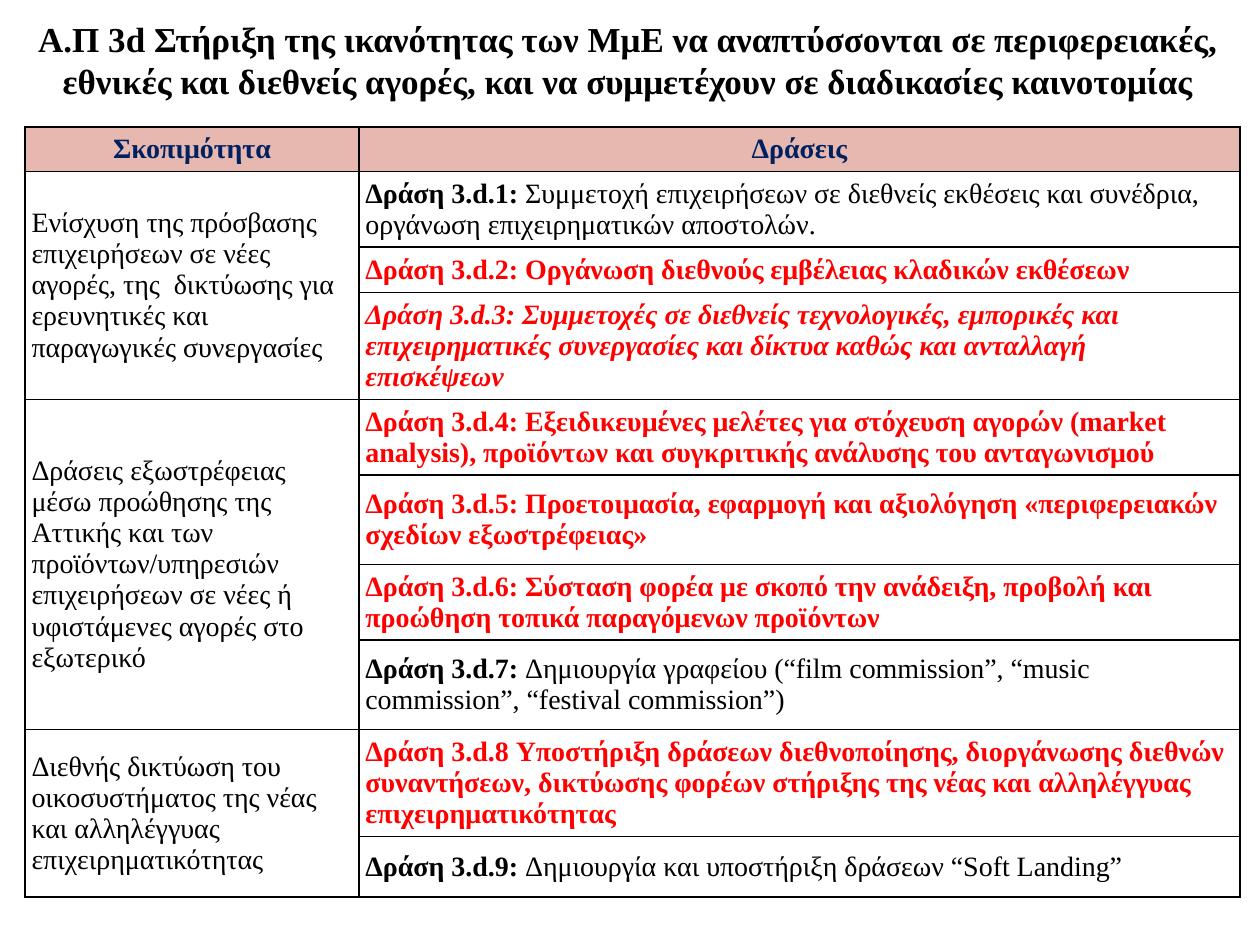
from pptx import Presentation
from pptx.dml.color import RGBColor
from pptx.enum.text import MSO_ANCHOR, PP_ALIGN
from pptx.oxml import parse_xml
from pptx.oxml.ns import nsdecls
from pptx.util import Inches, Pt

BLACK = RGBColor(0x00, 0x00, 0x00)
RED = RGBColor(0xFF, 0x00, 0x00)
NAVY = RGBColor(0x00, 0x20, 0x60)
PINK = RGBColor(0xE6, 0xB8, 0xAF)
WHITE = RGBColor(0xFF, 0xFF, 0xFF)

PLAIN = {"name": "Times New Roman", "size": Pt(16), "bold": False, "italic": False}
BOLD = {**PLAIN, "bold": True}
SLANT = {**BOLD, "italic": True}
LARGE = {**BOLD, "size": Pt(20)}
HEAD = {"vertical_anchor": MSO_ANCHOR.TOP, "margin_left": Inches(0.05),
        "margin_right": Inches(0.05), "margin_top": Inches(0.05),
        "margin_bottom": Inches(0.05)}
CELL = {**HEAD, "vertical_anchor": MSO_ANCHOR.MIDDLE, "margin_right": Inches(0.07)}

TITLE = ("Α.Π 3d Στήριξη της ικανότητας των ΜμΕ να αναπτύσσονται σε περιφερειακές, "
         "εθνικές και διεθνείς αγορές, και να συμμετέχουν σε διαδικασίες καινοτομίας")
COLS = [2.65, 6.99]
ROWS = [0.35, 0.6, 0.36, 0.85, 0.6, 0.71, 0.6, 0.71, 0.85, 0.48]
HEADS = ["Σκοπιμότητα", "Δράσεις"]


def lead(label, text):
    return [(label, BOLD, BLACK), (text, PLAIN, BLACK)]


def hot(text, form=BOLD):
    return [(text, form, RED)]


GROUPS = [
    ("Ενίσχυση της πρόσβασης επιχειρήσεων σε νέες αγορές, της  δικτύωσης για "
     "ερευνητικές και παραγωγικές συνεργασίες", [
         lead("Δράση 3.d.1: ", "Συμμετοχή επιχειρήσεων σε διεθνείς εκθέσεις και "
              "συνέδρια, οργάνωση επιχειρηματικών αποστολών."),
         hot("Δράση 3.d.2: Οργάνωση διεθνούς εμβέλειας κλαδικών εκθέσεων"),
         hot("Δράση 3.d.3: Συμμετοχές σε διεθνείς τεχνολογικές, εμπορικές και "
             "επιχειρηματικές συνεργασίες και δίκτυα καθώς και ανταλλαγή "
             "επισκέψεων", SLANT),
     ]),
    ("Δράσεις εξωστρέφειας μέσω προώθησης της Αττικής και των προϊόντων/υπηρεσιών "
     "επιχειρήσεων σε νέες ή υφιστάμενες αγορές στο εξωτερικό", [
         hot("Δράση 3.d.4: Εξειδικευμένες μελέτες για στόχευση αγορών (market "
             "analysis), προϊόντων και συγκριτικής ανάλυσης του ανταγωνισμού"),
         hot("Δράση 3.d.5: Προετοιμασία, εφαρμογή και αξιολόγηση «περιφερειακών "
             "σχεδίων εξωστρέφειας»"),
         hot("Δράση 3.d.6: Σύσταση φορέα με σκοπό την ανάδειξη, προβολή και "
             "προώθηση τοπικά παραγόμενων προϊόντων"),
         lead("Δράση 3.d.7: ", "Δημιουργία γραφείου (“film commission”, “music "
              "commission”, “festival commission”)"),
     ]),
    ("Διεθνής δικτύωση του οικοσυστήματος της νέας και αλληλέγγυας "
     "επιχειρηματικότητας", [
         hot("Δράση 3.d.8 Υποστήριξη δράσεων διεθνοποίησης, διοργάνωσης διεθνών "
             "συναντήσεων, δικτύωσης φορέων στήριξης της νέας και αλληλέγγυας "
             "επιχειρηματικότητας"),
         lead("Δράση 3.d.9: ", "Δημιουργία και υποστήριξη δράσεων “Soft Landing”"),
     ]),
]


def style(item, form):
    for key, value in form.items():
        setattr(item, key, value)


def write(frame, runs, align=PP_ALIGN.LEFT):
    para = frame.paragraphs[0]
    para.alignment = align
    for text, form, color in runs:
        run = para.add_run()
        run.text = text
        style(run.font, form)
        run.font.color.rgb = color


def frame_cell(cell, fill, form):
    style(cell, form)
    props = cell._tc.get_or_add_tcPr()
    for side in ("lnL", "lnR", "lnT", "lnB"):
        props.append(parse_xml(
            f'<a:{side} {nsdecls("a")} w="{Pt(1)}"><a:solidFill>'
            f'<a:srgbClr val="{BLACK}"/></a:solidFill></a:{side}>'))
    cell.fill.solid()
    cell.fill.fore_color.rgb = fill


def add_title(slide, box):
    frame = slide.shapes.add_textbox(*map(Inches, box)).text_frame
    frame.word_wrap = True
    write(frame, [(TITLE, LARGE, BLACK)], PP_ALIGN.CENTER)


def add_grid(slide, box):
    grid = slide.shapes.add_table(len(ROWS), len(COLS), *map(Inches, box)).table
    for col, width in zip(grid.columns, COLS):
        col.width = Inches(width)
    for index, (row, height) in enumerate(zip(grid.rows, ROWS)):
        row.height = Inches(height)
        fill, form = (WHITE, CELL) if index else (PINK, HEAD)
        for cell in row.cells:
            frame_cell(cell, fill, form)
    for col, text in enumerate(HEADS):
        write(grid.cell(0, col).text_frame, [(text, BOLD, NAVY)], PP_ALIGN.CENTER)
    top = 1
    for aim, acts in GROUPS:
        first = grid.cell(top, 0)
        first.merge(grid.cell(top + len(acts) - 1, 0))
        write(first.text_frame, [(aim, PLAIN, BLACK)])
        for row, runs in enumerate(acts, top):
            write(grid.cell(row, 1).text_frame, runs)
        top += len(acts)


def main():
    deck = Presentation()
    deck.slide_width, deck.slide_height = Inches(10), Inches(7.5)
    slide = deck.slides.add_slide(deck.slide_layouts[6])
    add_grid(slide, (0.2, 1.01, 9.64, sum(ROWS)))
    add_title(slide, (0.13, 0.09, 9.71, 0.77))
    deck.save("out.pptx")


if __name__ == "__main__":
    main()
